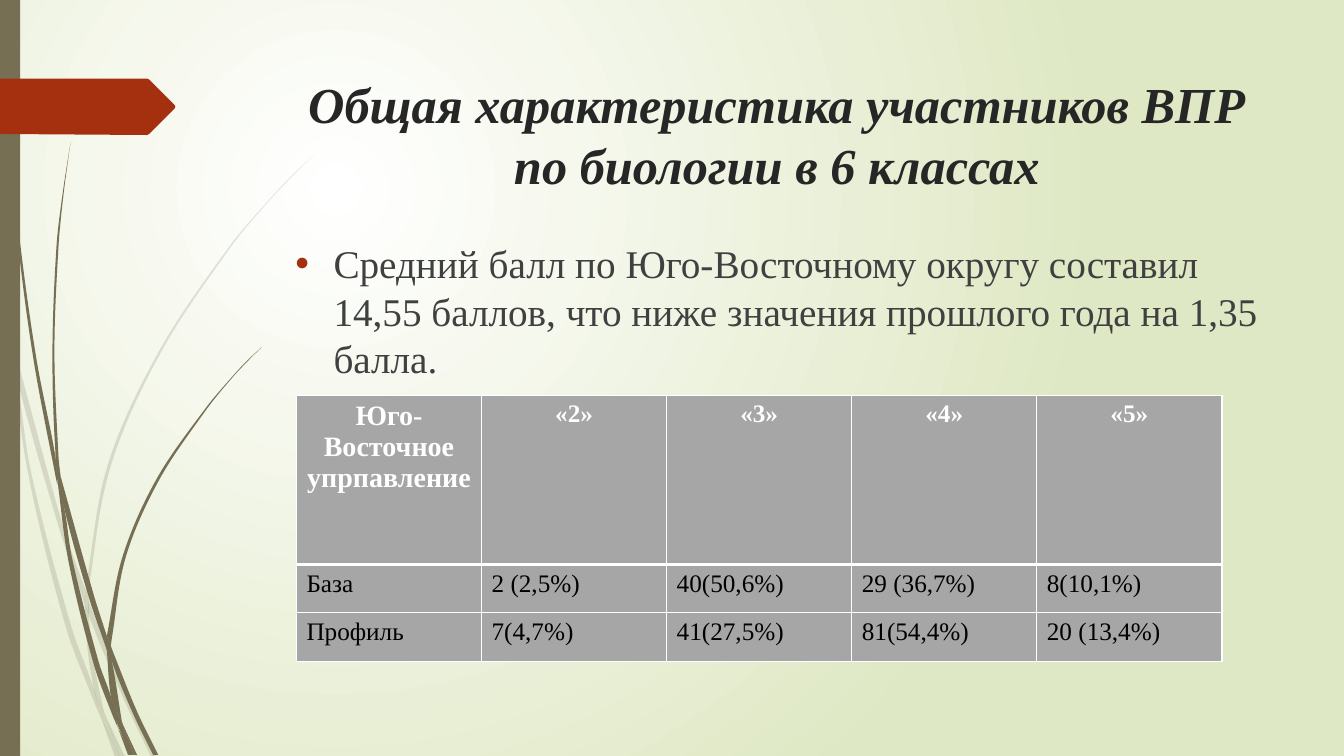
import pptx
import pptx.util
import pptx.dml.color
import pptx.enum.shapes
import pptx.enum.text
import pptx.oxml
import pptx.oxml.ns
from lxml import etree

Inches, Pt = pptx.util.Inches, pptx.util.Pt
qn = pptx.oxml.ns.qn
ALIGN = pptx.enum.text.PP_ALIGN

TITLE = "Общая характеристика участников ВПР по биологии в 6 классах"
SUMMARY = ("Средний балл по Юго-Восточному округу составил 14,55 баллов, "
           "что ниже значения прошлого года на 1,35 балла.")
GRADES = [
    ["Юго-Восточное упрпавление", "«2»", "«3»", "«4»", "«5»"],
    ["База", "2 (2,5%)", "40(50,6%)", "29 (36,7%)", "8(10,1%)"],
    ["Профиль", "7(4,7%)", "41(27,5%)", "81(54,4%)", "20 (13,4%)"],
]
ROW_HEIGHTS = [1.68, 0.48, 0.48]
TABLE_WIDTH = 9.18

OLIVE, RUST, GREY, WHITE = "766F54", "A53010", "A6A6A6", "FFFFFF"
FONT = "Times New Roman"
TITLE_FORMAT = {"name": FONT, "size": Pt(36), "bold": True, "italic": True}
SUMMARY_FORMAT = {"name": FONT, "size": Pt(28)}
CORNER_FORMAT = {"name": FONT, "size": Pt(20), "bold": True}
HEADER_FORMAT = {"name": FONT, "size": Pt(18), "bold": True}
VALUE_FORMAT = {"name": FONT, "size": Pt(18), "bold": False}

PALE_BLADES = [
    ([(0, 2.99), (0.1, 3.44), (0.11, 3.5)], [(0, 2.82), (0.09, 3.22), (0.11, 3.5)]),
    ([(0.14, 3.45), (0.17, 3.76), (0.58, 5.22), (0.84, 5.99)],
     [(0.14, 3.45), (0.62, 5.2), (0.85, 5.86)]),
    ([(0.88, 5.96), (0.88, 6.1), (1.23, 6.94), (1.5, 7.51)],
     [(0.88, 5.96), (0.92, 6.07), (1.27, 6.92), (1.55, 7.51)]),
    ([(1.05, 7.11), (1.19, 7.51)], [(1.05, 7.11), (1.24, 7.51)]),
    ([(0.11, 3.5), (0.28, 4.7), (0.65, 6.21), (0.92, 6.93), (1.01, 7.14)],
     [(0.11, 3.5), (0.17, 3.76), (0.31, 4.69), (0.7, 6.19), (0.93, 6.83),
      (0.99, 7.07), (1.01, 7.14)]),
    ([(0.84, 5.99), (0.87, 6.46), (0.93, 6.83), (0.96, 6.92), (1.05, 7.11)],
     [(0.84, 5.99), (0.88, 6.1), (0.91, 6.46), (1.03, 7.06), (1.05, 7.11)]),
    ([(3.12, 1.53), (2.89, 1.75), (2.68, 1.97), (2.28, 2.44), (1.58, 3.48),
      (1.07, 4.61), (0.85, 5.84), (0.85, 5.86)],
     [(3.12, 1.53), (2.9, 1.75), (2.68, 1.98), (2.29, 2.45), (1.6, 3.49),
      (1.1, 4.62), (0.88, 5.84), (0.88, 5.96)]),
    ([(1.01, 7.14), (1.14, 7.51)], [(1.01, 7.14), (1.19, 7.51)]),
    ([(0.85, 5.86), (0.84, 5.99), (0.88, 6.1)], [(0.85, 5.86), (0.88, 5.96), (0.88, 6.1)]),
    ([(0.93, 6.83), (0.99, 7.07), (1.01, 7.14), (1.19, 7.51)],
     [(0.93, 6.83), (0.96, 6.92), (1.05, 7.11), (1.19, 7.51)]),
]
DARK_BLADES = [
    ([(0.03, 0), (0.04, 0.48), (0.07, 1.1), (0.17, 2.33), (0.33, 3.55),
      (0.56, 4.77), (0.57, 4.81)],
     [(0.04, 0), (0.05, 0.48), (0.08, 1.09), (0.19, 2.32), (0.36, 3.55),
      (0.55, 4.53), (0.57, 4.81)]),
    ([(0.6, 4.72), (0.64, 5.05), (0.88, 5.92), (1.06, 6.45)],
     [(0.6, 4.72), (0.93, 5.9), (1.06, 6.31)]),
    ([(1.1, 6.41), (1.11, 6.56), (1.32, 7.08), (1.52, 7.49)],
     [(1.1, 6.41), (1.13, 6.49), (1.36, 7.06), (1.57, 7.49)]),
    ([(0.57, 4.77), (0.68, 5.57), (0.93, 6.59), (1.11, 7.08), (1.17, 7.22)],
     [(0.57, 4.77), (0.64, 5.05), (0.72, 5.56), (0.98, 6.57), (1.1, 6.91), (1.17, 7.22)]),
    ([(0.7, 1.41), (0.62, 1.93), (0.56, 2.45), (0.52, 3.49), (0.55, 4.49), (0.6, 4.72)],
     [(0.7, 1.41), (0.63, 1.93), (0.58, 2.45), (0.54, 3.49), (0.58, 4.53), (0.6, 4.72)]),
    ([(1.22, 7.19), (1.33, 7.49)], [(1.22, 7.19), (1.36, 7.49)]),
    ([(0.55, 4.49), (0.57, 4.77), (0.64, 5.05)], [(0.55, 4.49), (0.6, 4.72), (0.64, 5.05)]),
    ([(2.6, 3.44), (2.45, 3.58), (2.31, 3.73), (2.04, 4.05), (1.56, 4.74),
      (1.22, 5.51), (1.06, 6.31)],
     [(2.6, 3.44), (2.45, 3.59), (2.31, 3.74), (2.05, 4.06), (1.58, 4.76),
      (1.25, 5.52), (1.11, 6.33), (1.1, 6.41)]),
    ([(1.17, 7.22), (1.27, 7.49)], [(1.17, 7.22), (1.31, 7.49)]),
    ([(1.06, 6.45), (1.1, 6.91), (1.16, 7.06), (1.22, 7.19)],
     [(1.06, 6.45), (1.11, 6.56), (1.21, 7.16), (1.22, 7.19)]),
    ([(1.06, 6.31), (1.06, 6.45), (1.11, 6.56)], [(1.06, 6.31), (1.1, 6.41), (1.11, 6.56)]),
    ([(1.1, 6.91), (1.16, 7.17), (1.3, 7.49)],
     [(1.1, 6.91), (1.16, 7.06), (1.22, 7.19), (1.33, 7.49)]),
]
TAB = [(0, 0.78), (1.46, 0.78), (1.48, 0.79), (1.73, 1.04), (1.74, 1.06),
       (1.73, 1.08), (1.48, 1.33), (1.46, 1.34), (0, 1.33)]


def rgb(value):
    return pptx.dml.color.RGBColor.from_string(value)


def paint(shape, color, opacity=100):
    shape.shadow.inherit = False
    shape.fill.solid()
    shape.fill.fore_color.rgb = rgb(color)
    shape.line.fill.background()
    if opacity < 100:
        tint = shape.fill._xPr.find(qn("a:solidFill"))[0]
        etree.SubElement(tint, qn("a:alpha"), val=str(opacity * 1000))


def curve(points):
    last = len(points) - 1
    slopes = []
    for i in range(last + 1):
        (x0, y0), (x1, y1) = points[max(i - 1, 0)], points[min(i + 1, last)]
        slopes.append((x1 - x0) / (y1 - y0))
    for i in range(last):
        (x0, y0), (x1, y1) = points[i], points[i + 1]
        third = (y1 - y0) / 3
        yield [(x0 + slopes[i] * third, y0 + third),
               (x1 - slopes[i + 1] * third, y1 - third)]


def add_outline(slide, points, color, opacity=100):
    corners = [(Inches(x), Inches(y)) for x, y in points]
    builder = slide.shapes.build_freeform(*corners[0])
    builder.add_line_segments(corners[1:], close=True)
    outline = builder.convert_to_shape()
    paint(outline, color, opacity)
    return outline


def add_blade(slide, left, right, opacity):
    back = right[::-1]
    joint = [] if left[-1] == back[0] else [None]
    points = left + back[1 - len(joint):]
    bends = list(curve(left)) + joint + list(curve(back))
    blade = add_outline(slide, points, OLIVE, opacity)
    for line, bend in zip(list(blade.element.iter(qn("a:lnTo"))), bends):
        if bend:
            line.tag = qn("a:cubicBezTo")
            for place, (x, y) in enumerate(bend):
                line.insert(place, etree.Element(
                    qn("a:pt"), x=str(Inches(x) - blade.left), y=str(Inches(y) - blade.top)))


def write(frame, text, color, formats, align=ALIGN.LEFT):
    paragraph = frame.paragraphs[0]
    paragraph.alignment = align
    run = paragraph.add_run()
    run.text = text
    run.font.color.rgb = rgb(color)
    for key, value in formats.items():
        setattr(run.font, key, value)
    return paragraph


def add_text(slide, box, *content):
    frame = slide.shapes.add_textbox(*map(Inches, box)).text_frame
    frame.word_wrap = True
    return write(frame, *content)


def add_bullet(paragraph):
    paragraph.space_before = Pt(10)
    properties = paragraph._p.get_or_add_pPr()
    indent = Inches(0.38)
    properties.set("marL", str(indent))
    properties.set("indent", str(-indent))
    tint = etree.SubElement(properties, qn("a:buClr"))
    etree.SubElement(tint, qn("a:srgbClr"), val=RUST)
    etree.SubElement(properties, qn("a:buFont"), typeface="Arial")
    etree.SubElement(properties, qn("a:buChar"), char="•")


def add_borders(cell, widths):
    properties = cell._tc.get_or_add_tcPr()
    for place, (side, width) in enumerate(widths.items()):
        line = etree.Element(qn("a:ln" + side), w=str(Pt(width)))
        fill = etree.SubElement(line, qn("a:solidFill"))
        etree.SubElement(fill, qn("a:srgbClr"), val=WHITE)
        properties.insert(place, line)


def add_background(slide):
    fill = slide.background.fill
    fill.gradient()
    for stop, color in zip(fill.gradient_stops, [WHITE, "DFE8C4"]):
        stop.color.rgb = rgb(color)
    gradient = slide.element.find(".//" + qn("a:gradFill"))
    gradient.remove(gradient.find(qn("a:lin")))
    circle = etree.SubElement(gradient, qn("a:path"), {"path": "circle"})
    etree.SubElement(circle, qn("a:fillToRect"), l="50000", t="50000", r="100000", b="100000")


def add_grades(slide):
    columns = len(GRADES[0])
    table = slide.shapes.add_table(
        len(GRADES), columns, Inches(2.94), Inches(3.92),
        Inches(TABLE_WIDTH), Inches(sum(ROW_HEIGHTS))).table
    for r, (height, texts) in enumerate(zip(ROW_HEIGHTS, GRADES)):
        table.rows[r].height = Inches(height)
        for c, text in enumerate(texts):
            cell = table.cell(r, c)
            cell.fill.solid()
            cell.fill.fore_color.rgb = rgb(GREY)
            add_borders(cell, {"L": 1, "R": 1, "T": 3 if r == 1 else 1, "B": 3 if r == 0 else 1})
            if r == 0:
                formats = HEADER_FORMAT if c else CORNER_FORMAT
                write(cell.text_frame, text, WHITE, formats, ALIGN.CENTER)
            else:
                write(cell.text_frame, text, "000000", VALUE_FORMAT)


def main():
    deck = pptx.Presentation()
    deck.slide_width, deck.slide_height = Inches(13.33), Inches(7.5)
    slide = deck.slides.add_slide(deck.slide_layouts[6])
    add_background(slide)
    for blades, opacity in [(PALE_BLADES, 20), (DARK_BLADES, 100)]:
        for left, right in blades:
            add_blade(slide, left, right, opacity)
    paint(slide.shapes.add_shape(pptx.enum.shapes.MSO_SHAPE.RECTANGLE,
                                 0, 0, Inches(0.2), Inches(7.5)), OLIVE)
    add_outline(slide, TAB, RUST)
    add_text(slide, (2.83, 0.68, 9.75, 1.4), TITLE, "262626", TITLE_FORMAT, ALIGN.CENTER)
    add_bullet(add_text(slide, (2.83, 2.33, 9.75, 4.13), SUMMARY, "404040", SUMMARY_FORMAT))
    add_grades(slide)
    deck.save("out.pptx")


if __name__ == "__main__":
    main()
